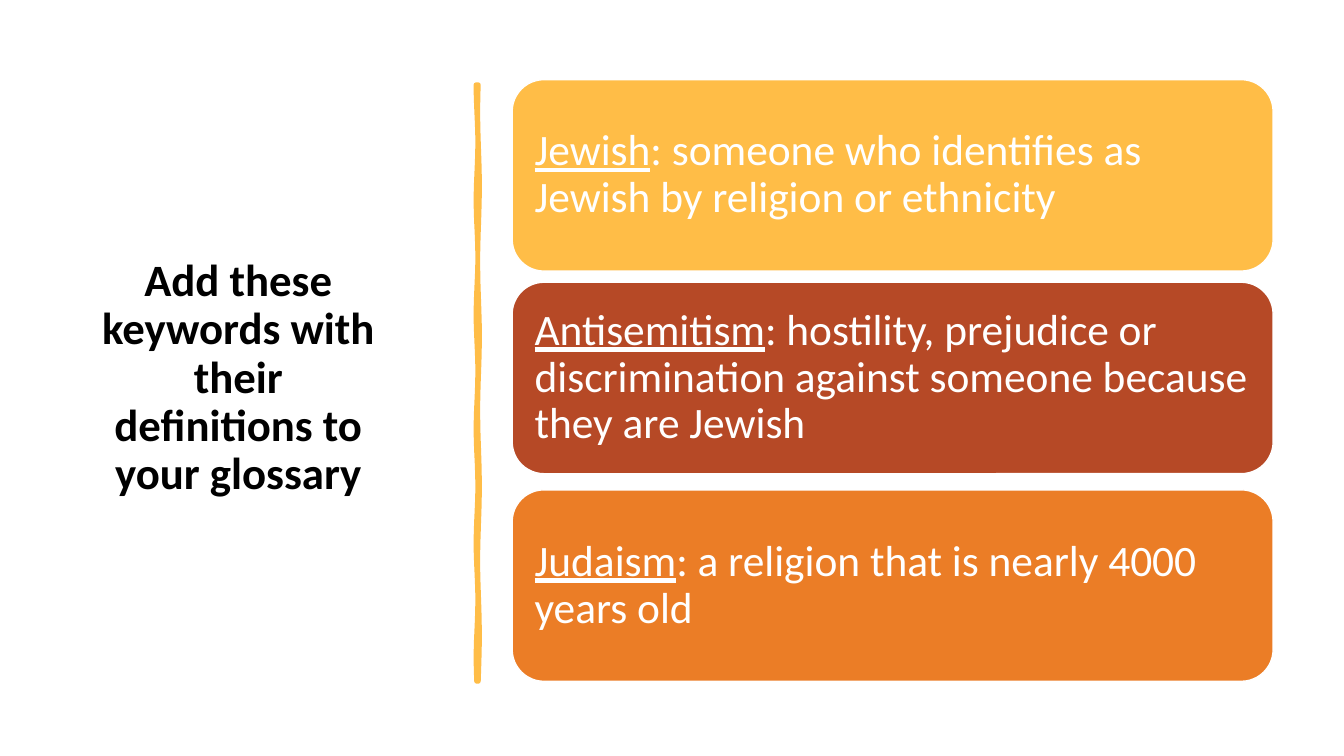
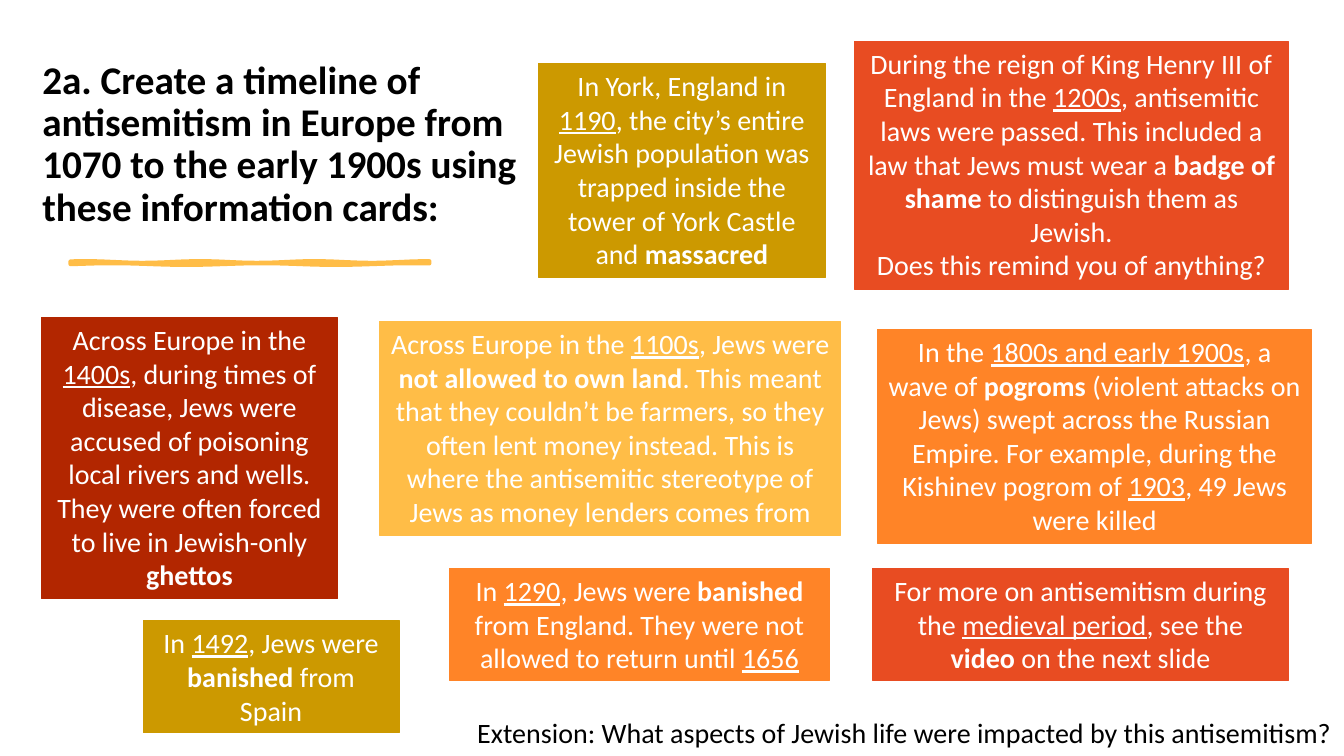
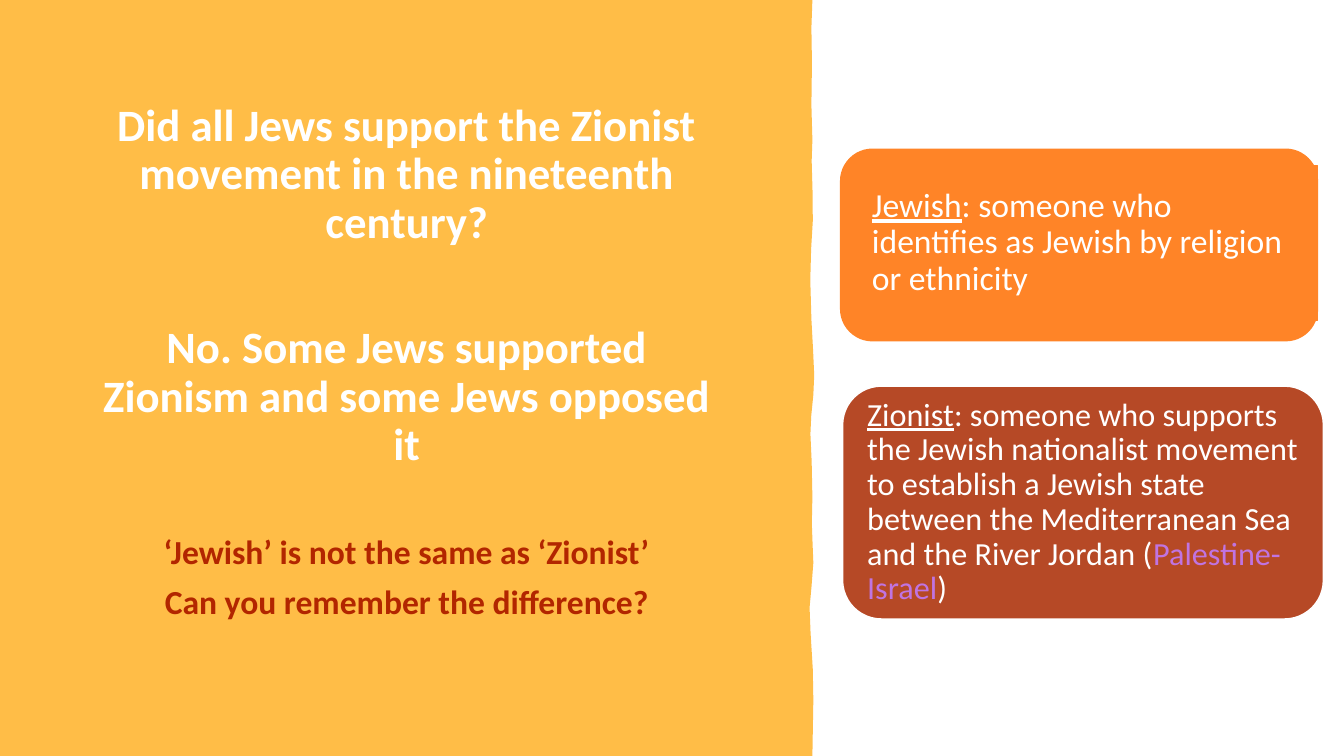
import math

import pptx
import pptx.dml.color
import pptx.enum.shapes
import pptx.enum.text
import pptx.util

Pt = pptx.util.Pt
SHAPES = pptx.enum.shapes.MSO_SHAPE
ALIGN = pptx.enum.text.PP_ALIGN
ANCHOR = pptx.enum.text.MSO_ANCHOR

FONT = "Calibri"
WIDTH, HEIGHT = 960, 540
BLACK, WHITE = "000000", "FFFFFF"
AMBER, ORANGE, RUST = "FFBD47", "FF8427", "B64926"
RED, DARK_RED, MUSTARD = "E84C22", "B22600", "CC9900"
PUMPKIN, LILAC = "EB7D26", "C074E1"
DEFAULT_MARGINS = (7.2, 3.6, 7.2, 3.6)
CARD_MARGINS = (9.4, 9.4, 9.4, 9.4)

JEWISH = [("Jewish", "u"), (": someone who identifies as Jewish by religion or ethnicity", "")]

GLOSSARY_TITLE = "Add these keywords with their definitions to your glossary"
GLOSSARY_CARDS = [
    (56.9, AMBER, JEWISH),
    (201.6, RUST, [("Antisemitism", "u"), (": hostility, prejudice or discrimination against someone because they are Jewish", "")]),
    (349.9, PUMPKIN, [("Judaism", "u"), (": a religion that is nearly 4000 years old", "")]),
]

TIMELINE_TITLE = "2a. Create a timeline of antisemitism in Europe from 1070 to the early 1900s using these information cards:"
TIMELINE_CARDS = [
    ((384.5, 45.4, 205.2, 152.6), MUSTARD, [[
        ("In York, England in ", ""), ("1190", "u"),
        (", the city’s entire Jewish population was trapped inside the tower of York Castle and ", ""),
        ("massacred", "b")]]),
    ((610.6, 29.5, 309.6, 177.1), RED, [[
        ("During the reign of King Henry III of England in the ", ""), ("1200s", "u"),
        (", antisemitic laws were passed. This included a law that Jews must wear a ", ""),
        ("badge of shame ", "b"), ("to distinguish them as Jewish.", "")],
        [("Does this remind you of anything?", "")]]),
    ((29.5, 226.8, 211.7, 200.9), DARK_RED, [[
        ("Across Europe in the ", ""), ("1400s", "u"),
        (", during times of disease, Jews were accused of poisoning local rivers and wells. "
         "They were often forced to live in Jewish-only ", ""), ("ghettos", "b")]]),
    ((271.4, 229.7, 329, 152.6), AMBER, [[
        ("Across Europe in the ", ""), ("1100s", "u"), (", Jews were ", ""),
        ("not allowed to own land", "b"),
        (". This meant that they couldn’t be farmers, so they often lent money instead. "
         "This is where the antisemitic stereotype of Jews as money lenders comes from", "")]]),
    ((627.1, 235.4, 309.6, 152.6), ORANGE, [[
        ("In the ", ""), ("1800s and early 1900s", "u"), (", a wave of ", ""), ("pogroms", "b"),
        (" (violent attacks on Jews) swept across the Russian Empire. "
         "For example, during the Kishinev pogrom of ", ""), ("1903", "u"), (", 49 Jews were killed", "")]]),
    ((102.2, 443.5, 182.9, 79.9), MUSTARD, [[
        ("In ", ""), ("1492", "u"), (", Jews were ", ""), ("banished", "b"), (" from Spain", "")]]),
    ((321.1, 406.1, 271.4, 79.9), ORANGE, [[
        ("In ", ""), ("1290", "u"), (", Jews were ", ""), ("banished", "b"),
        (" from England. They were not allowed to return until ", ""), ("1656", "u")]]),
    ((623.5, 406.1, 296.6, 79.9), RED, [[
        ("For more on antisemitism during the ", ""), ("medieval period", "u"), (", see the ", ""),
        ("video", "b"), (" on the next slide", "")]]),
]
EXTENSION = "Extension: What aspects of Jewish life were impacted by this antisemitism?"

DEBATE_LINES = [
    ("Did all Jews support the Zionist movement in the nineteenth century?", 32, WHITE, 10),
    ("No. Some Jews supported Zionism and some Jews opposed it", 32, WHITE, 55),
    ("‘Jewish’ is not the same as ‘Zionist’", 24, DARK_RED, 46.3),
    ("Can you remember the difference?", 24, DARK_RED, 10),
]
ZIONIST = [
    ("Zionist", "u"),
    (": someone who supports the Jewish nationalist movement to establish a Jewish state "
     "between the Mediterranean Sea and the River Jordan (", ""),
    ("Palestine-Israel", "", LILAC), (")", ""),
]
PANEL_EDGE = [
    (580.3, 0), (579.6, 20), (580, 45), (579.6, 75), (580.3, 100), (579.8, 115),
    (580.5, 140), (580.6, 158), (579.4, 178), (578.8, 200), (579.6, 228),
    (580.8, 250), (581.6, 268), (581, 282), (579.5, 297), (578.9, 310), (579.8, 330),
    (580.3, 355), (579.9, 374), (580.5, 390), (581, 402), (579.6, 420),
    (578.3, 434), (579, 452), (580.6, 478), (581, 500), (580.3, 540),
]


def color(value):
    return pptx.dml.color.RGBColor.from_string(value)


def place(shape, box):
    shape.left, shape.top, shape.width, shape.height = [Pt(length) for length in box]


def paint(shape, fill, line=None, line_width=0.75):
    shape.shadow.inherit = False
    shape.fill.solid()
    shape.fill.fore_color.rgb = color(fill)
    if line:
        shape.line.color.rgb = color(line)
        shape.line.width = Pt(line_width)
    else:
        shape.line.fill.background()


def set_frame(shape, anchor, margins=DEFAULT_MARGINS):
    frame = shape.text_frame
    frame.word_wrap = True
    frame.auto_size = pptx.enum.text.MSO_AUTO_SIZE.NONE
    frame.vertical_anchor = anchor
    frame.margin_left, frame.margin_top, frame.margin_right, frame.margin_bottom = [
        Pt(margin) for margin in margins]
    return frame


def add_runs(paragraph, runs, size, text_color, align, spacing=0.9, before=0):
    paragraph.alignment = align
    paragraph.line_spacing = spacing
    paragraph.space_before = Pt(before)
    for text, style, *own_color in runs:
        run = paragraph.add_run()
        run.text = text
        font = run.font
        font.name, font.size = FONT, Pt(size)
        font.bold, font.underline = "b" in style, "u" in style
        font.color.rgb = color(own_color[0] if own_color else text_color)


def set_title(slide, box, text, size, align, anchor):
    title = slide.shapes.title
    place(title, box)
    frame = set_frame(title, anchor)
    add_runs(frame.paragraphs[0], [(text, "b")], size, BLACK, align)


def add_box(slide, kind, box, fill, line, line_width=0.75):
    shape = slide.shapes.add_shape(kind, *[Pt(length) for length in box])
    paint(shape, fill, line, line_width)
    return shape


def write_definition(shape, runs, size, margins=CARD_MARGINS):
    frame = set_frame(shape, ANCHOR.MIDDLE, margins)
    add_runs(frame.paragraphs[0], runs, size, WHITE, ALIGN.LEFT)


def add_outline(slide, points, fill, line=None, line_width=0.75):
    corners = [(Pt(x), Pt(y)) for x, y in points]
    builder = slide.shapes.build_freeform(*corners[0])
    builder.add_line_segments(corners[1:], close=True)
    paint(builder.convert_to_shape(), fill, line, line_width)


def add_brush_stroke(slide, start, end, center, vertical, line_width):
    steps = 60
    stations = [start + (end - start) * step / steps for step in range(steps + 1)]
    near = [(along, center - 0.7 + 0.6 * math.sin(along / 13)) for along in stations]
    far = [(along, center + 0.7 + 0.6 * math.sin(along / 17)) for along in reversed(stations)]
    points = near + far
    if vertical:
        points = [(across, along) for along, across in points]
    add_outline(slide, points, AMBER, AMBER, line_width)


def build_glossary(slide):
    set_title(slide, (60.5, 218.2, 219.6, 104.4), GLOSSARY_TITLE, 32, ALIGN.CENTER, ANCHOR.MIDDLE)
    add_brush_stroke(slide, 60.5, 486.7, 341.3, True, 3.25)
    for top, fill, runs in GLOSSARY_CARDS:
        card = add_box(slide, SHAPES.ROUNDED_RECTANGLE, (365.8, top, 543.6, 136.8), fill, WHITE, 1)
        write_definition(card, runs, 31)


def build_timeline(slide):
    set_title(slide, (23, 15.1, 362.2, 152.6), TIMELINE_TITLE, 28, ALIGN.LEFT, ANCHOR.BOTTOM)
    add_brush_stroke(slide, 50.4, 306.7, 187.9, False, 3)
    for box, fill, paragraphs in TIMELINE_CARDS:
        card = add_box(slide, SHAPES.RECTANGLE, box, fill, fill)
        frame = set_frame(card, ANCHOR.TOP)
        for index, runs in enumerate(paragraphs):
            paragraph = frame.add_paragraph() if index else frame.paragraphs[0]
            add_runs(paragraph, runs, 20, WHITE, ALIGN.CENTER, 1.0)
    extension = slide.shapes.add_textbox(Pt(332), Pt(510.5), Pt(628), Pt(29))
    frame = set_frame(extension, ANCHOR.TOP, (0, 3.6, 0, 0))
    add_runs(frame.paragraphs[0], [(EXTENSION, "")], 20, BLACK, ALIGN.CENTER)


def build_debate(slide):
    title = slide.shapes.title
    title.element.getparent().remove(title.element)
    add_outline(slide, [(0, 0)] + PANEL_EDGE + [(0, HEIGHT)], AMBER)

    body = slide.placeholders[1]
    slide.shapes._spTree.append(body.element)
    place(body, (62.6, 59.8, 455.8, 438.5))
    frame = set_frame(body, ANCHOR.MIDDLE, (7.2, 3.6, 7.2, 44.3))
    for index, (text, size, text_color, before) in enumerate(DEBATE_LINES):
        paragraph = frame.add_paragraph() if index else frame.paragraphs[0]
        add_runs(paragraph, [(text, "b")], size, text_color, ALIGN.CENTER, before=before)
        properties = paragraph._p.get_or_add_pPr()
        properties.set("marL", "0")
        properties.set("indent", "0")
        properties.append(pptx.oxml.parse_xml(
            '<a:buNone xmlns:a="http://schemas.openxmlformats.org/drawingml/2006/main"/>'))

    add_box(slide, SHAPES.ROUNDED_RECTANGLE, (600.5, 106.6, 340.6, 136.8), ORANGE, ORANGE, 1)
    jewish_panel = add_box(slide, SHAPES.RECTANGLE, (613.4, 118.1, 327.6, 110.9), ORANGE, ORANGE)
    write_definition(jewish_panel, JEWISH, 24)
    zionist_card = add_box(slide, SHAPES.ROUNDED_RECTANGLE, (601.9, 275.8, 343.4, 166.3), RUST, WHITE, 1)
    write_definition(zionist_card, ZIONIST, 23, (9.4, 0, 0, 0))


def main():
    presentation = pptx.Presentation()
    presentation.slide_width, presentation.slide_height = Pt(WIDTH), Pt(HEIGHT)
    for layout, build in [(5, build_glossary), (5, build_timeline), (1, build_debate)]:
        build(presentation.slides.add_slide(presentation.slide_layouts[layout]))
    presentation.save("out.pptx")


if __name__ == "__main__":
    main()
